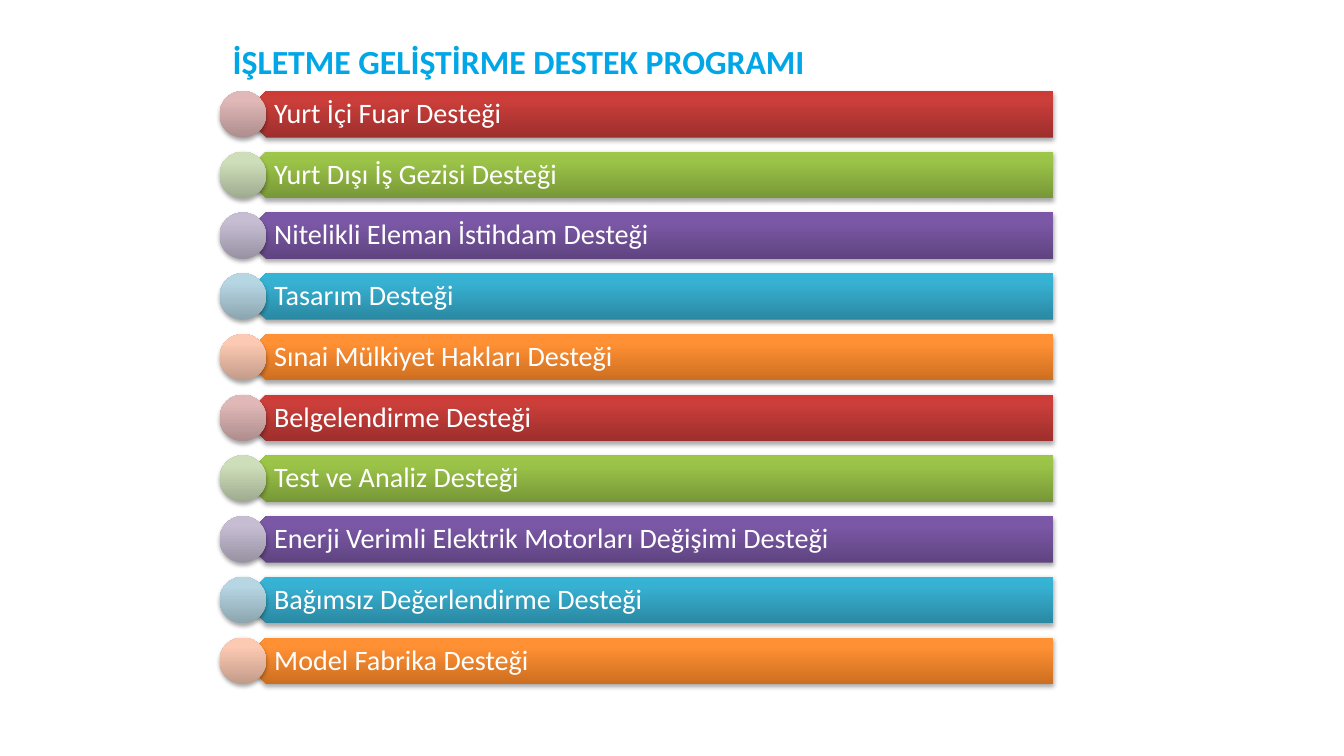
from copy import deepcopy

from lxml import etree
from pptx import Presentation
from pptx.dml.color import RGBColor
from pptx.enum.shapes import MSO_SHAPE
from pptx.enum.text import MSO_ANCHOR, PP_ALIGN
from pptx.oxml.ns import qn
from pptx.util import Pt

PX = 9144  # 100 px to the inch
PLATE, OVAL = MSO_SHAPE.PENTAGON, MSO_SHAPE.OVAL
MIDDLE = MSO_ANCHOR.MIDDLE
LEFT, CENTER = PP_ALIGN.LEFT, PP_ALIGN.CENTER

COLORS = {
    "title": "00A6E6", "text": "FFFFFF", "shadow": "000000",
    "bars": [
        ("9C2F2D", "CB3E3A", "CE3B37"),
        ("779737", "9BC348", "9DC746"),
        ("5F4480", "7B58A6", "7C57A8"),
        ("2A88A2", "37B1D2", "34B4D6"),
        ("CC6E20", "FF9034", "FF9136"),
    ],
    "dots": [
        ("AD8D8D", "E0B8B7", "E2B8B7"),
        ("9FAB8F", "CFDEBA", "D0DFBA"),
        ("9892A2", "C6BDD3", "C6BED4"),
        ("8CA5AF", "B6D6E3", "B6D7E5"),
        ("C29B89", "FCC9B2", "FECAB2"),
    ],
}
STOPS = (0, 0.8, 1)

TITLE = "İŞLETME GELİŞTİRME DESTEK PROGRAMI"
ITEMS = [
    "Yurt İçi Fuar Desteği",
    "Yurt Dışı İş Gezisi Desteği",
    "Nitelikli Eleman İstihdam Desteği",
    "Tasarım Desteği",
    "Sınai Mülkiyet Hakları Desteği",
    "Belgelendirme Desteği",
    "Test ve Analiz Desteği",
    "Enerji Verimli Elektrik Motorları Değişimi Desteği",
    "Bağımsız Değerlendirme Desteği",
    "Model Fabrika Desteği",
]


def scale(*sizes):
    return [size * PX for size in sizes]


def apply(target, values):
    for name, value in values.items():
        setattr(target, name, value)


def write(shape, text, color, frame, para, font):
    """Set the text of a shape and format its frame, paragraph and font."""
    box = shape.text_frame
    box.text = text
    apply(box, {"vertical_anchor": MIDDLE, **frame})
    line = box.paragraphs[0]
    apply(line, para)
    apply(line.font, {"name": "Calibri", **font})
    line.font.color.rgb = RGBColor.from_string(color)


def shade(shape, colors):
    """Give a shape a three-stop gradient, dark at the bottom, and a shadow."""
    fill = shape.fill
    fill.gradient()
    fill.gradient_angle = 90
    props = shape._element.spPr
    stops = props.find(".//" + qn("a:gsLst"))
    stops.append(deepcopy(stops[0]))
    for stop, place, color in zip(fill.gradient_stops, STOPS, colors):
        stop.position = place
        stop.color.rgb = RGBColor.from_string(color)
    shape.line.fill.background()
    shape.shadow.inherit = False
    drop = etree.SubElement(
        props.find(qn("a:effectLst")), qn("a:outerShdw"),
        blurRad=str(Pt(3.1)), dist=str(Pt(1.8)), dir="5400000", rotWithShape="0")
    tint = etree.SubElement(drop, qn("a:srgbClr"), val=COLORS["shadow"])
    etree.SubElement(tint, qn("a:alpha"), val="35000")


def add_title(slide, x, y, w, h):
    title = slide.shapes.title
    apply(title, dict(zip(("left", "top", "width", "height"), scale(x, y, w, h))))
    write(title, TITLE, COLORS["title"], {"word_wrap": False},
          {"alignment": CENTER}, {"size": Pt(24), "bold": True})


def add_row(slide, x, y, w, h, text, bar, dot):
    """Draw one bar pointing left, with its label and the dot on its tip."""
    shapes = slide.shapes
    half = h // 2
    plate = shapes.add_shape(PLATE, *scale(x + half, y, w - half, h))
    plate._element.spPr.find(qn("a:xfrm")).set("flipH", "1")
    shade(plate, bar)
    label = shapes.add_textbox(*scale(x + 34, y, w - 34, h))
    sides = ("margin_left", "margin_top", "margin_right", "margin_bottom")
    write(label, text, COLORS["text"],
          {"word_wrap": True, **dict(zip(sides, scale(20, 8, 16, 8)))},
          {"alignment": LEFT, "line_spacing": 0.9, "space_after": Pt(7)},
          {"size": Pt(20)})
    shade(shapes.add_shape(OVAL, *scale(x, y, h, h)), dot)


def add_list(slide, x, y, w, h):
    bars, dots = COLORS["bars"], COLORS["dots"]
    tall = 46
    step = (h - tall) // (len(ITEMS) - 1)
    for i, text in enumerate(ITEMS):
        hue = i % len(bars)
        add_row(slide, x, y + i * step, w, tall, text, bars[hue], dots[hue])


def main():
    deck = Presentation()
    deck.slide_width, deck.slide_height = scale(1328, 747)
    slide = deck.slides.add_slide(deck.slide_layouts[5])
    add_title(slide, 218, 35, 589, 50)
    add_list(slide, 217, 90, 824, 586)
    deck.save("out.pptx")


if __name__ == "__main__":
    main()
